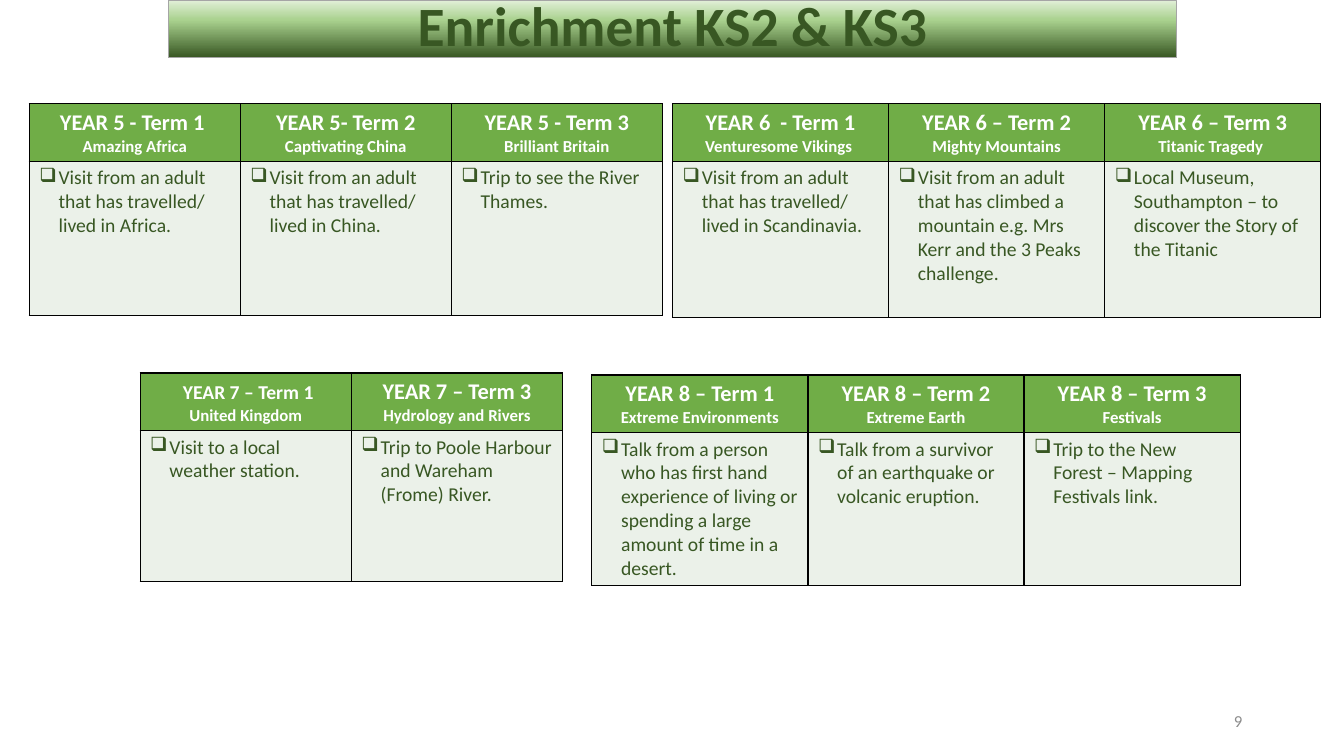
import copy
import dataclasses

import pptx
import pptx.dml.color
import pptx.enum.shapes
import pptx.enum.text
import pptx.oxml
import pptx.oxml.ns
import pptx.util

Inches = pptx.util.Inches
Align = pptx.enum.text.PP_ALIGN
Anchor = pptx.enum.text.MSO_ANCHOR


@dataclasses.dataclass
class Term:
    heading: str
    topic: str
    activity: str
    size: str = "heading"
    lead: str = ""


@dataclasses.dataclass
class YearTable:
    left: float
    top: float
    width: float
    body_height: float
    terms: list


TITLE = "Enrichment KS2 & KS3"
PAGE_NUMBER = "9"
YEARS = [
    YearTable(0.29, 1.03, 6.28, 1.53, [
        Term("YEAR 5 - Term 1 ", "Amazing Africa",
             "Visit from an adult that has travelled/ lived in Africa."),
        Term("YEAR 5- Term 2", "Captivating China",
             "Visit from an adult that has travelled/ lived in China."),
        Term("YEAR 5 - Term 3", "Brilliant Britain", "Trip to see the River Thames."),
    ]),
    YearTable(6.67, 1.03, 6.43, 1.55, [
        Term("YEAR 6  - Term 1", "Venturesome Vikings ",
             "Visit from an adult that has travelled/ lived in Scandinavia."),
        Term("YEAR 6 – Term 2", "Mighty Mountains",
             "Visit from an adult that has climbed a mountain e.g. Mrs Kerr "
             "and the 3 Peaks challenge."),
        Term("YEAR 6 – Term 3", "Titanic Tragedy ",
             "Local Museum, Southampton – to discover the Story of the Titanic"),
    ]),
    YearTable(1.39, 3.7, 4.19, 1.5, [
        Term("YEAR 7 – Term 1", "United Kingdom", "Visit to a local weather station.",
             size="body", lead=" "),
        Term("YEAR 7 – Term 3", "Hydrology and Rivers",
             "Trip to Poole Harbour and Wareham (Frome) River."),
    ]),
    YearTable(5.87, 3.72, 6.43, 1.52, [
        Term("YEAR 8 – Term 1", "Extreme Environments",
             "Talk from a person who has first hand experience of living or "
             "spending a large amount of time in a desert."),
        Term("YEAR 8 – Term 2", "Extreme Earth",
             "Talk from a survivor of an earthquake or volcanic eruption."),
        Term("YEAR 8 – Term 3", "Festivals",
             "Trip to the New Forest – Mapping Festivals link."),
    ]),
]
HEADER_HEIGHT = 0.57
BULLET = "❑"
BULLET_INDENT = 0.19

THEME = {
    "font": "Calibri",
    "sizes": {"title": 39.6, "heading": 16, "body": 14, "topic": 12, "number": 12},
    "dark": "385723",
    "header": "70AD47",
    "cell": "EBF1E9",
    "white": "FFFFFF",
    "number": "8C8C8C",
    "banner_line": "A5A5A5",
    "border": "000000",
    "banner": [(0, "E2F0D9"), (0.35, "A9D18E"), (1, "385723")],
}


def rgb(name):
    return pptx.dml.color.RGBColor.from_string(THEME.get(name, name))


def style_span(span, size, color, bold=False):
    span.font.name = THEME["font"]
    span.font.size = pptx.util.Pt(THEME["sizes"][size])
    span.font.bold = bold
    span.font.color.rgb = rgb(color)


def fill_cell(cell, color):
    """Fill the cell and give it a thin border on all four sides."""
    cell.fill.solid()
    cell.fill.fore_color.rgb = rgb(color)
    properties = cell._tc.get_or_add_tcPr()
    for position, side in enumerate("LRTB"):
        properties.insert(position, pptx.oxml.parse_xml(
            f'<a:ln{side} {pptx.oxml.ns.nsdecls("a")} w="12700"><a:solidFill>'
            f'<a:srgbClr val="{THEME["border"]}"/></a:solidFill></a:ln{side}>'))


def add_bullet(para):
    properties = para._p.get_or_add_pPr()
    indent = Inches(BULLET_INDENT)
    properties.set("marL", str(indent))
    properties.set("indent", str(-indent))
    properties.append(pptx.oxml.parse_xml(
        f'<a:buChar {pptx.oxml.ns.nsdecls("a")} char="{BULLET}"/>'))


def write_header(cell, term):
    fill_cell(cell, "header")
    heading = cell.text_frame.paragraphs[0]
    topic = cell.text_frame.add_paragraph()
    heading.alignment = topic.alignment = Align.CENTER
    for para, text, size in ((heading, term.lead, "heading"),
                             (heading, term.heading, term.size),
                             (topic, term.topic, "topic")):
        if text:
            span = para.add_run()
            span.text = text
            style_span(span, size, "white", bold=True)


def write_activity(cell, term):
    fill_cell(cell, "cell")
    cell.text_frame.text = term.activity
    para = cell.text_frame.paragraphs[0]
    add_bullet(para)
    style_span(para.runs[0], "body", "dark")


def add_year(page, year):
    count = len(year.terms)
    table = page.shapes.add_table(
        2, count, Inches(year.left), Inches(year.top), Inches(year.width),
        Inches(HEADER_HEIGHT + year.body_height)).table
    table.horz_banding = False
    table.rows[0].height = Inches(HEADER_HEIGHT)
    table.rows[1].height = Inches(year.body_height)
    for index, term in enumerate(year.terms):
        table.columns[index].width = Inches(year.width / count)
        write_header(table.cell(0, index), term)
        write_activity(table.cell(1, index), term)


def add_banner(page):
    banner = page.shapes.add_shape(
        pptx.enum.shapes.MSO_SHAPE.RECTANGLE,
        Inches(1.67), Inches(0), Inches(10), Inches(0.57))
    banner.shadow.inherit = False
    banner.line.color.rgb = rgb("banner_line")
    banner.line.width = pptx.util.Pt(0.5)
    banner.fill.gradient()
    banner.fill.gradient_angle = 270
    stop_list = banner.element.spPr.find(".//" + pptx.oxml.ns.qn("a:gsLst"))
    stop_list.append(copy.deepcopy(stop_list[0]))
    for stop, (position, color) in zip(banner.fill.gradient_stops, THEME["banner"]):
        stop.position = position
        stop.color.rgb = rgb(color)
    write_line(banner, TITLE, Align.CENTER, "title", "dark", bold=True)
    banner.text_frame.paragraphs[0].line_spacing = 0.9


def write_line(box, text, alignment, size, color, bold=False):
    box.text_frame.text = text
    box.text_frame.word_wrap = True
    box.text_frame.vertical_anchor = Anchor.MIDDLE
    para = box.text_frame.paragraphs[0]
    para.alignment = alignment
    style_span(para.runs[0], size, color, bold)


def main():
    deck = pptx.Presentation()
    deck.slide_width, deck.slide_height = Inches(13.33), Inches(7.5)
    page = deck.slides.add_slide(deck.slide_layouts[6])
    add_banner(page)
    number = page.shapes.add_textbox(Inches(9.42), Inches(6.95), Inches(3), Inches(0.4))
    write_line(number, PAGE_NUMBER, Align.RIGHT, "number", "number")
    for year in YEARS:
        add_year(page, year)
    deck.save("out.pptx")


if __name__ == "__main__":
    main()
